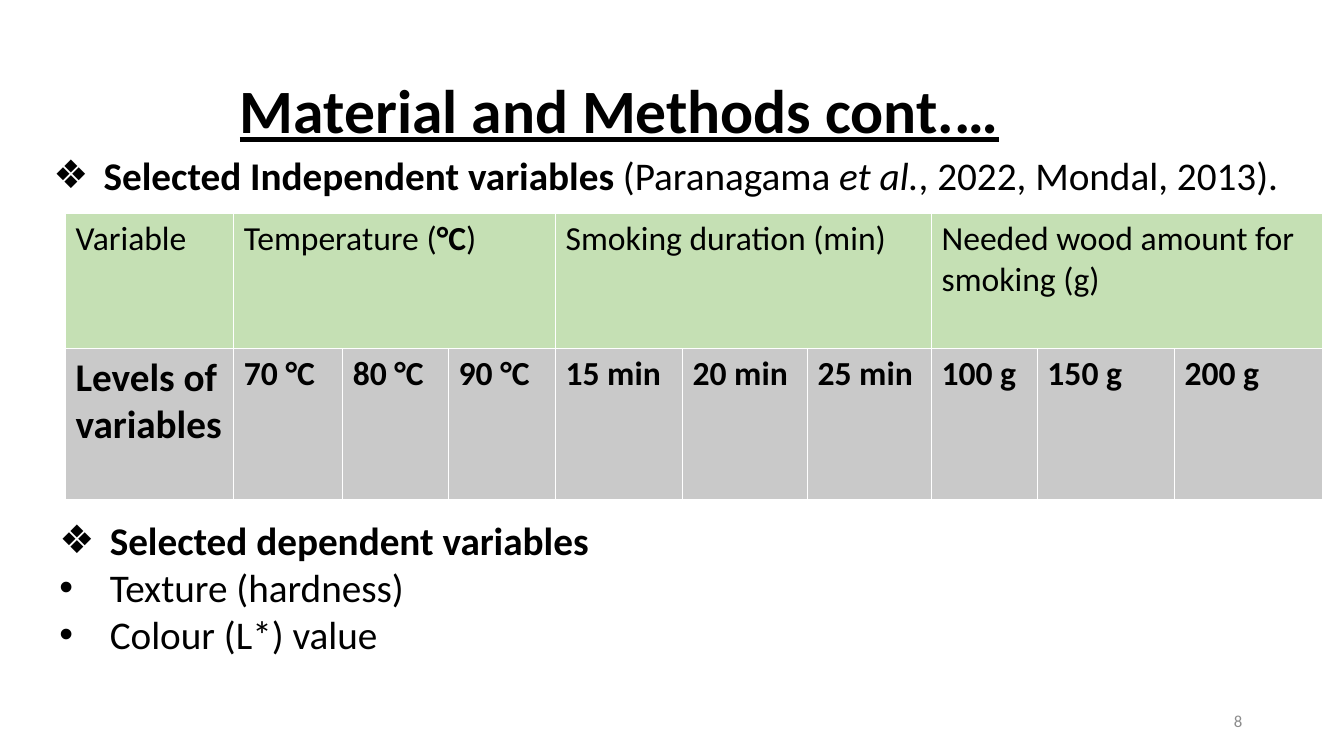
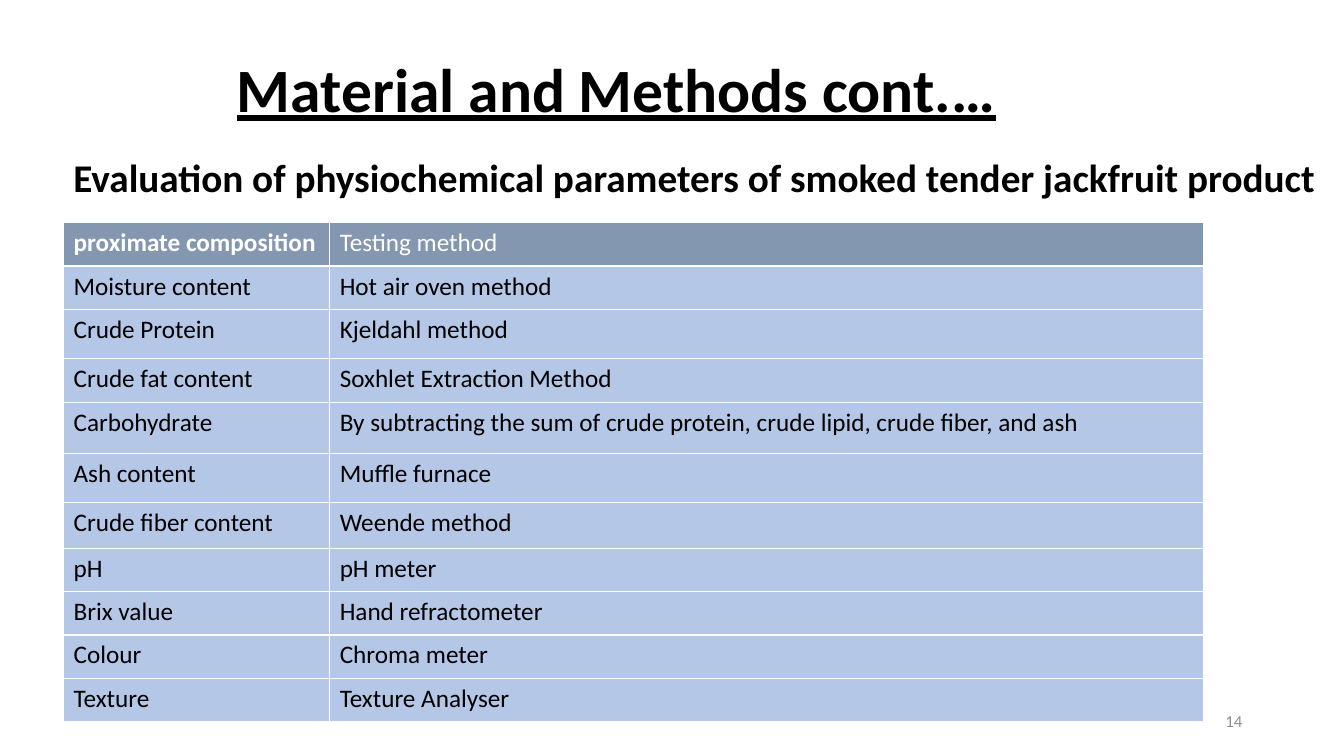
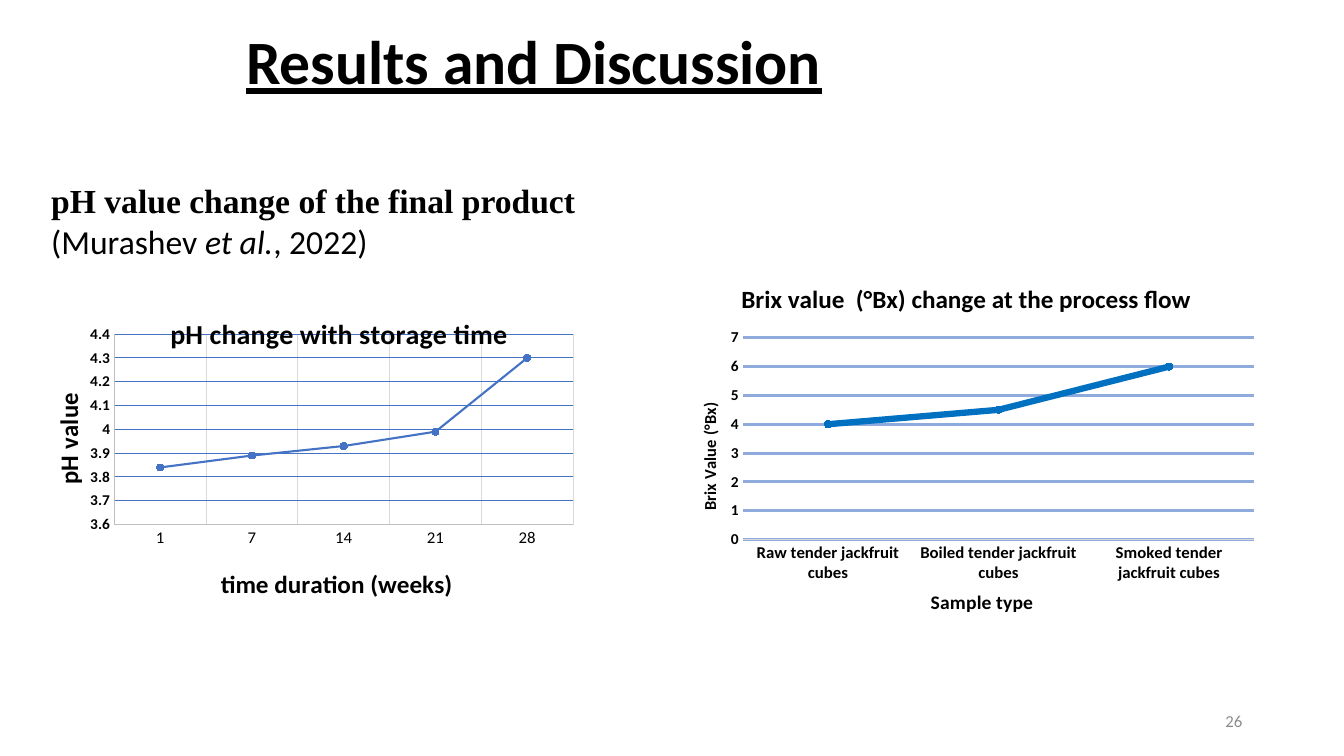
from dataclasses import dataclass
from typing import Any, NamedTuple, Optional

import lxml.etree
import pptx
import pptx.chart.data
import pptx.dml.color
import pptx.enum.chart
import pptx.enum.text
import pptx.oxml.ns
import pptx.util

Inches = pptx.util.Inches
Pt = pptx.util.Pt
RGBColor = pptx.dml.color.RGBColor
qn = pptx.oxml.ns.qn

BLACK = RGBColor(0x00, 0x00, 0x00)
WHITE = RGBColor(0xFF, 0xFF, 0xFF)
NUMBER_GREY = RGBColor(0x8C, 0x8C, 0x8C)
HEADER_GREEN = RGBColor(0xC5, 0xE0, 0xB4)
LEVEL_GREY = RGBColor(0xC9, 0xC9, 0xC9)
HEADER_SLATE = RGBColor(0x84, 0x97, 0xB0)
METHOD_BLUE = RGBColor(0xB4, 0xC7, 0xE7)
AXIS_GREY = RGBColor(0xBF, 0xBF, 0xBF)
PALE_GREY = RGBColor(0xD9, 0xD9, 0xD9)
SERIES_BLUE = RGBColor(0x44, 0x72, 0xC4)
BRIX_BLUE = RGBColor(0x00, 0x70, 0xC0)
BRIX_GRID = RGBColor(0x8F, 0xAA, 0xDC)

BODY_FONT = "Calibri"
SERIF_FONT = "Times New Roman"


class Area(NamedTuple):
    left: float
    top: float
    width: float
    height: float

    def lengths(self) -> list[int]:
        return [Inches(value) for value in self]


class Run(NamedTuple):
    text: str
    bold: bool = False
    italic: bool = False
    font: str = BODY_FONT


class Line(NamedTuple):
    runs: list[Run]
    bullet: str = ""
    spacing: float = 1.0


@dataclass
class Cell:
    runs: list[Run]
    fill: RGBColor
    size: int
    color: RGBColor = BLACK
    span: int = 1


class Stroke(NamedTuple):
    color: RGBColor
    width: float


class Heading(NamedTuple):
    text: str
    size: int
    x: float
    y: float


@dataclass
class AxisStyle:
    heading: Heading
    size: int
    bold: bool
    line: Optional[Stroke]
    grid: Optional[Stroke]


@dataclass
class LineChart:
    area: Area
    plot: Area
    heading: Heading
    category_axis: AxisStyle
    value_axis: AxisStyle
    scale: tuple[float, float, float]
    categories: list[str]
    values: list[float]
    stroke: Stroke


def set_font(font: Any, size: float, bold: bool = False, color: RGBColor = BLACK,
             name: str = BODY_FONT) -> None:
    font.name = name
    font.size = Pt(size)
    font.bold = bold
    font.color.rgb = color


def write_runs(paragraph: Any, runs: list[Run], size: float, color: RGBColor = BLACK) -> None:
    for part in runs:
        run = paragraph.add_run()
        run.text = part.text
        set_font(run.font, size, part.bold, color, part.font)
        run.font.italic = part.italic


def add_bullet(paragraph: Any, symbol: str) -> None:
    properties = paragraph._p.get_or_add_pPr()
    properties.set("marL", str(Inches(0.5)))
    properties.set("indent", str(-Inches(0.5)))
    lxml.etree.SubElement(properties, qn("a:buFont")).set("typeface", "Arial")
    lxml.etree.SubElement(properties, qn("a:buChar")).set("char", symbol)


def add_text(slide: Any, area: Area, lines: list[Line], size: float) -> None:
    frame = slide.shapes.add_textbox(*area.lengths()).text_frame
    frame.word_wrap = True
    for index, line in enumerate(lines):
        paragraph = frame.add_paragraph() if index else frame.paragraphs[0]
        paragraph.line_spacing = line.spacing
        if line.bullet:
            add_bullet(paragraph, line.bullet)
        write_runs(paragraph, line.runs, size)


def add_slide(deck: Any, title: str, title_area: Area, number: int) -> Any:
    slide = deck.slides.add_slide(deck.slide_layouts[5])
    holder = slide.shapes.title
    holder.left, holder.top, holder.width, holder.height = title_area.lengths()
    frame = holder.text_frame
    frame.auto_size = pptx.enum.text.MSO_AUTO_SIZE.NONE
    frame.vertical_anchor = pptx.enum.text.MSO_ANCHOR.MIDDLE
    paragraph = frame.paragraphs[0]
    paragraph.alignment = pptx.enum.text.PP_ALIGN.LEFT
    paragraph.line_spacing = 0.9
    write_runs(paragraph, [Run(title, bold=True)], 44)
    paragraph.runs[0].font.underline = True

    number_frame = slide.shapes.add_textbox(*Area(9.42, 6.95, 3, 0.4).lengths()).text_frame
    number_frame.word_wrap = True
    number_frame.vertical_anchor = pptx.enum.text.MSO_ANCHOR.MIDDLE
    number_frame.paragraphs[0].alignment = pptx.enum.text.PP_ALIGN.RIGHT
    write_runs(number_frame.paragraphs[0], [Run(str(number))], 12, NUMBER_GREY)
    return slide


def add_table(slide: Any, left: float, top: float, widths: list[float],
              heights: list[float], rows: list[list[Cell]]) -> None:
    area = Area(left, top, sum(widths), sum(heights))
    table = slide.shapes.add_table(len(heights), len(widths), *area.lengths()).table
    for column, width in zip(table.columns, widths):
        column.width = Inches(width)
    for row, height in zip(table.rows, heights):
        row.height = Inches(height)
    for row_index, cells in enumerate(rows):
        column_index = 0
        for content in cells:
            cell = table.cell(row_index, column_index)
            if content.span > 1:
                cell.merge(table.cell(row_index, column_index + content.span - 1))
            cell.fill.solid()
            cell.fill.fore_color.rgb = content.fill
            write_runs(cell.text_frame.paragraphs[0], content.runs, content.size, content.color)
            column_index += content.span


def set_layout(parent: Any, **values: Any) -> None:
    layout = parent.find(qn("c:layout"))
    if layout is None:
        layout = lxml.etree.Element(qn("c:layout"))
        parent.insert(0, layout)
    manual = lxml.etree.SubElement(layout, qn("c:manualLayout"))
    for tag, value in values.items():
        lxml.etree.SubElement(manual, qn(f"c:{tag}")).set("val", str(value))


def write_heading(title: Any, heading: Heading, upright: bool = False) -> None:
    write_runs(title.text_frame.paragraphs[0], [Run(heading.text, bold=True)], heading.size)
    if upright:
        body = title.text_frame._txBody.find(qn("a:bodyPr"))
        body.set("rot", "-5400000")
        body.set("vert", "horz")
    set_layout(title._element, xMode="edge", yMode="edge", x=heading.x, y=heading.y)


def set_stroke(line: Any, stroke: Optional[Stroke]) -> None:
    if stroke is None:
        line.fill.background()
        return
    line.color.rgb = stroke.color
    line.width = Pt(stroke.width)


def style_axis(axis: Any, style: AxisStyle, upright: bool) -> None:
    write_heading(axis.axis_title, style.heading, upright)
    axis.major_tick_mark = pptx.enum.chart.XL_TICK_MARK.NONE
    axis.minor_tick_mark = pptx.enum.chart.XL_TICK_MARK.NONE
    set_font(axis.tick_labels.font, style.size, style.bold)
    set_stroke(axis.format.line, style.line)
    axis.has_major_gridlines = style.grid is not None
    if style.grid:
        set_stroke(axis.major_gridlines.format.line, style.grid)


def add_line_chart(slide: Any, content: LineChart) -> None:
    data = pptx.chart.data.CategoryChartData()
    data.categories = content.categories
    data.add_series("Series 1", content.values)
    chart = slide.shapes.add_chart(
        pptx.enum.chart.XL_CHART_TYPE.LINE_MARKERS, *content.area.lengths(), data).chart
    set_font(chart.font, 10)
    chart.has_legend = False
    write_heading(chart.chart_title, content.heading)
    style_axis(chart.category_axis, content.category_axis, False)
    style_axis(chart.value_axis, content.value_axis, True)
    axis = chart.value_axis
    axis.minimum_scale, axis.maximum_scale, axis.major_unit = content.scale
    axis.tick_labels.number_format = "General"
    axis.tick_labels.number_format_is_linked = False

    plot = content.plot
    set_layout(chart._chartSpace.chart.plotArea, layoutTarget="inner", xMode="edge",
               yMode="edge", x=plot.left, y=plot.top, w=plot.width, h=plot.height)
    chart.plots[0].vary_by_categories = False
    series = chart.plots[0].series[0]
    series.smooth = False
    set_stroke(series.format.line, content.stroke)
    series.marker.style = pptx.enum.chart.XL_MARKER_STYLE.CIRCLE
    series.marker.size = 5
    series.marker.format.fill.solid()
    series.marker.format.fill.fore_color.rgb = SERIES_BLUE
    set_stroke(series.marker.format.line, Stroke(content.stroke.color, 0.75))


def build_variables(deck: Any) -> None:
    slide = add_slide(deck, "Material and Methods cont.…", Area(2.28, 0.4, 10.13, 1.45), 8)
    add_text(slide, Area(0.43, 1.45, 12.68, 1.04), [
        Line([Run("Selected Independent variables ", bold=True), Run("(Paranagama "),
              Run("et al.", italic=True), Run(", 2022, Mondal, 2013).")], "❖"),
    ], 28)
    groups = [
        [Run("Temperature ("), Run("°C", bold=True), Run(")")],
        [Run("Smoking duration (min)")],
        [Run("Needed wood amount for smoking (g)")],
    ]
    levels = ["70 °C", "80 °C", "90 °C", "15 min", "20 min", "25 min",
              "100 g", "150 g", "200 g"]
    header = [Cell([Run("Variable")], HEADER_GREEN, 24)]
    header += [Cell(runs, HEADER_GREEN, 24, span=3) for runs in groups]
    level_row = [Cell([Run("Levels of variables", bold=True)], LEVEL_GREY, 28)]
    level_row += [Cell([Run(level, bold=True)], LEVEL_GREY, 24) for level in levels]
    add_table(slide, 0.65, 2.12,
              [1.67, 1.08, 1.05, 1.06, 1.26, 1.24, 1.23, 1.05, 1.36, 1.47],
              [1.34, 1.5], [header, level_row])
    add_text(slide, Area(0.49, 5.07, 12.55, 1.51), [
        Line([Run("Selected dependent variables", bold=True)], "❖"),
        Line([Run("Texture (hardness)")], "•"),
        Line([Run("Colour (L*) value")], "•"),
    ], 28)


def build_methods(deck: Any) -> None:
    slide = add_slide(deck, "Material and Methods cont.…", Area(2.25, 0.39, 9.75, 1.05), 14)
    add_text(slide, Area(0.63, 1.44, 13, 0.58), [
        Line([Run("Evaluation of physiochemical parameters of smoked tender jackfruit product",
                  bold=True)], spacing=1.07),
    ], 28)
    methods = [
        ("Moisture content", "Hot air oven method"),
        ("Crude Protein", "Kjeldahl method"),
        ("Crude fat content", "Soxhlet Extraction Method"),
        ("Carbohydrate",
         "By subtracting the sum of crude protein, crude lipid, crude fiber, and ash"),
        ("Ash content", "Muffle furnace"),
        ("Crude fiber content", "Weende method"),
        ("pH", "pH meter"),
        ("Brix value", "Hand refractometer"),
        ("Colour", "Chroma meter"),
        ("Texture", "Texture Analyser"),
    ]
    header = [Cell([Run("proximate composition", bold=True)], HEADER_SLATE, 18, WHITE),
              Cell([Run("Testing method")], HEADER_SLATE, 18, WHITE)]
    rows = [[Cell([Run(text)], METHOD_BLUE, 18) for text in pair] for pair in methods]
    add_table(slide, 0.63, 2.21, [2.64, 8.67],
              [0.43, 0.43, 0.49, 0.43, 0.51, 0.49, 0.45, 0.43, 0.43, 0.43, 0.43],
              [header, *rows])


def build_results(deck: Any) -> None:
    slide = add_slide(deck, "Results and Discussion", Area(2.34, 0.17, 10.08, 0.94), 26)
    add_text(slide, Area(0.41, 1.74, 6.03, 1.11), [
        Line([Run("pH value change of the final product", bold=True, font=SERIF_FONT)]),
        Line([Run("(Murashev "), Run("et al.", italic=True), Run(", 2022)")]),
    ], 24)
    ph_change = LineChart(
        area=Area(0.29, 2.85, 5.62, 3.17),
        plot=Area(0.15, 0.15, 0.81, 0.61),
        heading=Heading("pH change with storage time", 20, 0.24, 0.07),
        category_axis=AxisStyle(Heading("time duration (weeks)", 18, 0.33, 0.88), 12, False,
                                Stroke(AXIS_GREY, 0.75), Stroke(PALE_GREY, 0.75)),
        value_axis=AxisStyle(Heading("pH value", 18, 0.03, 0.33), 11, True,
                             Stroke(AXIS_GREY, 0.75), Stroke(SERIES_BLUE, 0.75)),
        scale=(3.6, 4.4, 0.1),
        categories=["1", "7", "14", "21", "28"],
        values=[3.84, 3.89, 3.93, 3.99, 4.3],
        stroke=Stroke(SERIES_BLUE, 1.5),
    )
    brix_change = LineChart(
        area=Area(6.6, 2.58, 5.9, 3.58),
        plot=Area(0.13, 0.22, 0.86, 0.57),
        heading=Heading("Brix value  (°Bx) change at the process flow", 18, 0.12, 0.05),
        category_axis=AxisStyle(Heading("Sample type", 14, 0.44, 0.92), 12, True,
                                Stroke(PALE_GREY, 0.75), None),
        value_axis=AxisStyle(Heading("Brix Value (°Bx)", 12, 0.05, 0.4), 11, True,
                             None, Stroke(BRIX_GRID, 2.25)),
        scale=(0, 7, 1),
        categories=[f"{state} tender jackfruit cubes" for state in ("Raw", "Boiled", "Smoked")],
        values=[4, 4.5, 6],
        stroke=Stroke(BRIX_BLUE, 4.5),
    )
    for content in (ph_change, brix_change):
        add_line_chart(slide, content)


def main() -> None:
    deck = pptx.Presentation()
    deck.slide_width = Inches(13.33)
    deck.slide_height = Inches(7.5)
    build_variables(deck)
    build_methods(deck)
    build_results(deck)
    deck.save("out.pptx")


if __name__ == "__main__":
    main()
